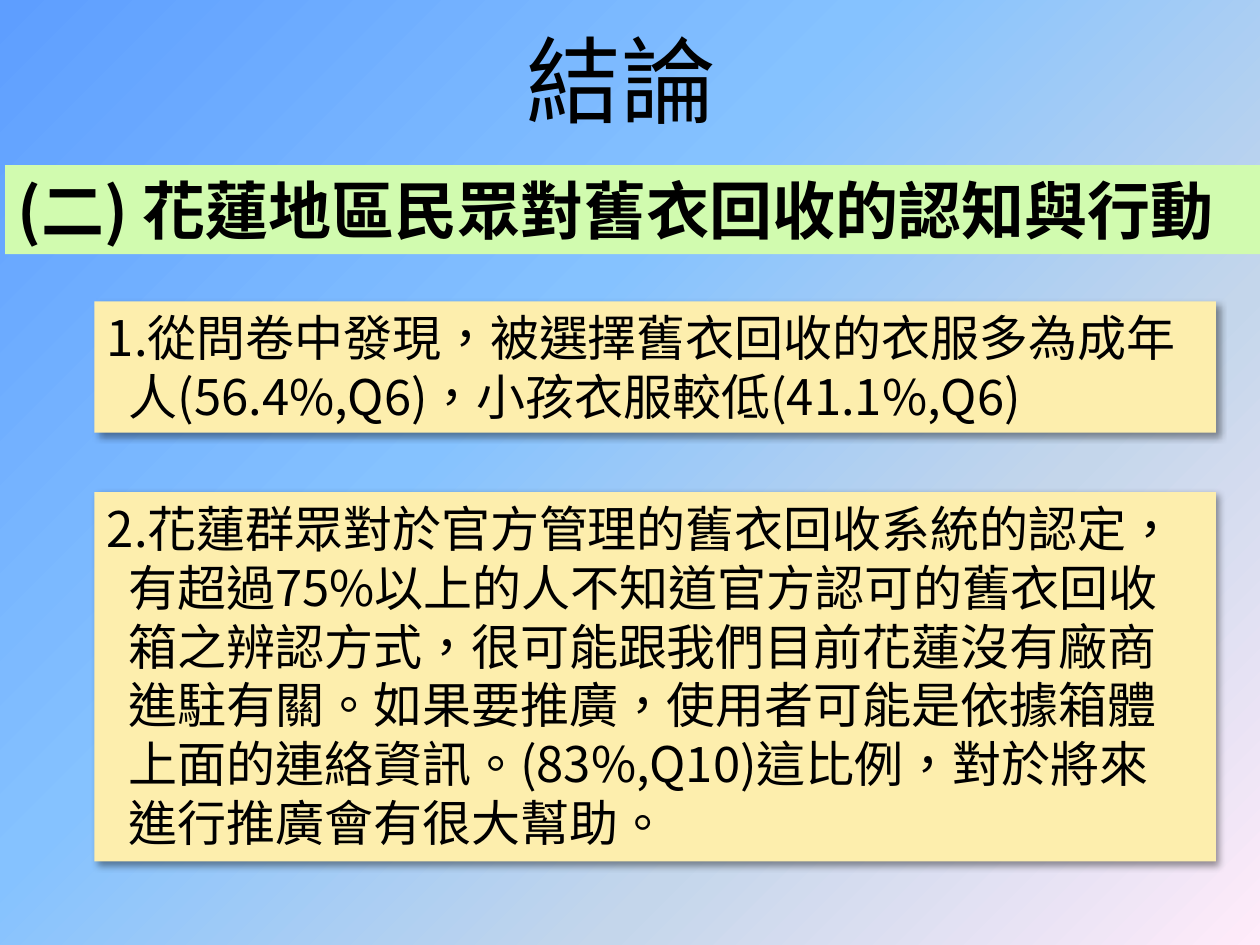
"""Build the conclusion slide on used-clothing recycling in Hualien."""
from lxml.etree import SubElement
from pptx import Presentation
from pptx.dml.color import RGBColor
from pptx.enum.shapes import MSO_SHAPE
from pptx.enum.text import MSO_ANCHOR, PP_ALIGN as ALIGN
from pptx.oxml import parse_xml
from pptx.oxml.ns import nsdecls, qn
from pptx.util import Pt

FONT = "Noto Sans CJK SC"


def rgb(value):
    return RGBColor.from_string(value)


def add_run(p, text, size, bold=False):
    r = p.add_run()
    r.text = text
    r.font.name = FONT
    r.font.size = Pt(size)
    r.font.bold = bold
    r.font.color.rgb = rgb("000000")
    rPr = r.font._element
    rPr.set("lang", "zh-TW")
    SubElement(rPr, qn("a:ea")).set("typeface", FONT)


prs = Presentation()
prs.slide_width, prs.slide_height = Pt(720), Pt(540)
s = prs.slides.add_slide(prs.slide_layouts[5])

fill = s.background.fill
fill.gradient()
fill.gradient_angle = 315
stops = s._element.find(".//" + qn("a:gsLst"))
for stop in list(stops):
    stops.remove(stop)
for pos, color in [(0, "5E9EFF"), (40, "85C2FF"), (70, "C4D6EB"), (100, "FFEBFA")]:
    stops.append(parse_xml(
        f'<a:gs {nsdecls("a")} pos="{pos * 1000}"><a:srgbClr val="{color}"/></a:gs>'))

title = s.shapes.title
title.left, title.top, title.width, title.height = Pt(31), Pt(0), Pt(648), Pt(90)
tf = title.text_frame
tf.vertical_anchor = MSO_ANCHOR.MIDDLE
p = tf.paragraphs[0]
p.alignment = ALIGN.CENTER
add_run(p, "結論", 54)

finding_1 = [
    "1.從問卷中發現，被選擇舊衣回收的衣服多為成年",
    "人(56.4%,Q6)，小孩衣服較低(41.1%,Q6)",
]
heading = ["(二) 花蓮地區民眾對舊衣回收的認知與行動"]
finding_2 = [
    "2.花蓮群眾對於官方管理的舊衣回收系統的認定，",
    "有超過75%以上的人不知道官方認可的舊衣回收",
    "箱之辨認方式，很可能跟我們目前花蓮沒有廠商",
    "進駐有關。如果要推廣，使用者可能是依據箱體",
    "上面的連絡資訊。(83%,Q10)這比例，對於將來",
    "進行推廣會有很大幫助。",
]
boxes = [
    (54, 172.2, 640.8, 75.1, finding_1, False),
    (2.9, 94.4, 723.6, 50.9, heading, True),
    (54, 281.3, 640.8, 211, finding_2, False),
]
for left, top, width, height, lines, is_heading in boxes:
    sp = s.shapes.add_shape(MSO_SHAPE.RECTANGLE, Pt(left), Pt(top), Pt(width), Pt(height))
    sp.fill.solid()
    sp.fill.fore_color.rgb = rgb("D1FBAF" if is_heading else "FDEEAD")
    sp.line.fill.background()
    sp.shadow.inherit = False
    if not is_heading:
        sp._element.spPr.find(qn("a:effectLst")).append(parse_xml(
            f'<a:outerShdw {nsdecls("a")} blurRad="{Pt(4)}" dist="{Pt(3)}" dir="2700000"'
            ' algn="tl" rotWithShape="0"><a:srgbClr val="000000"><a:alpha val="40000"/>'
            '</a:srgbClr></a:outerShdw>'))
    tf = sp.text_frame
    tf.word_wrap = not is_heading
    tf.vertical_anchor = MSO_ANCHOR.TOP
    for i, line in enumerate(lines):
        p = tf.paragraphs[0] if i == 0 else tf.add_paragraph()
        p.alignment = ALIGN.LEFT if is_heading else ALIGN.JUSTIFY
        if i:
            p._p.get_or_add_pPr().set("marL", str(Pt(12.5)))
        add_run(p, line, 36 if is_heading else 28, is_heading)

prs.save("out.pptx")
